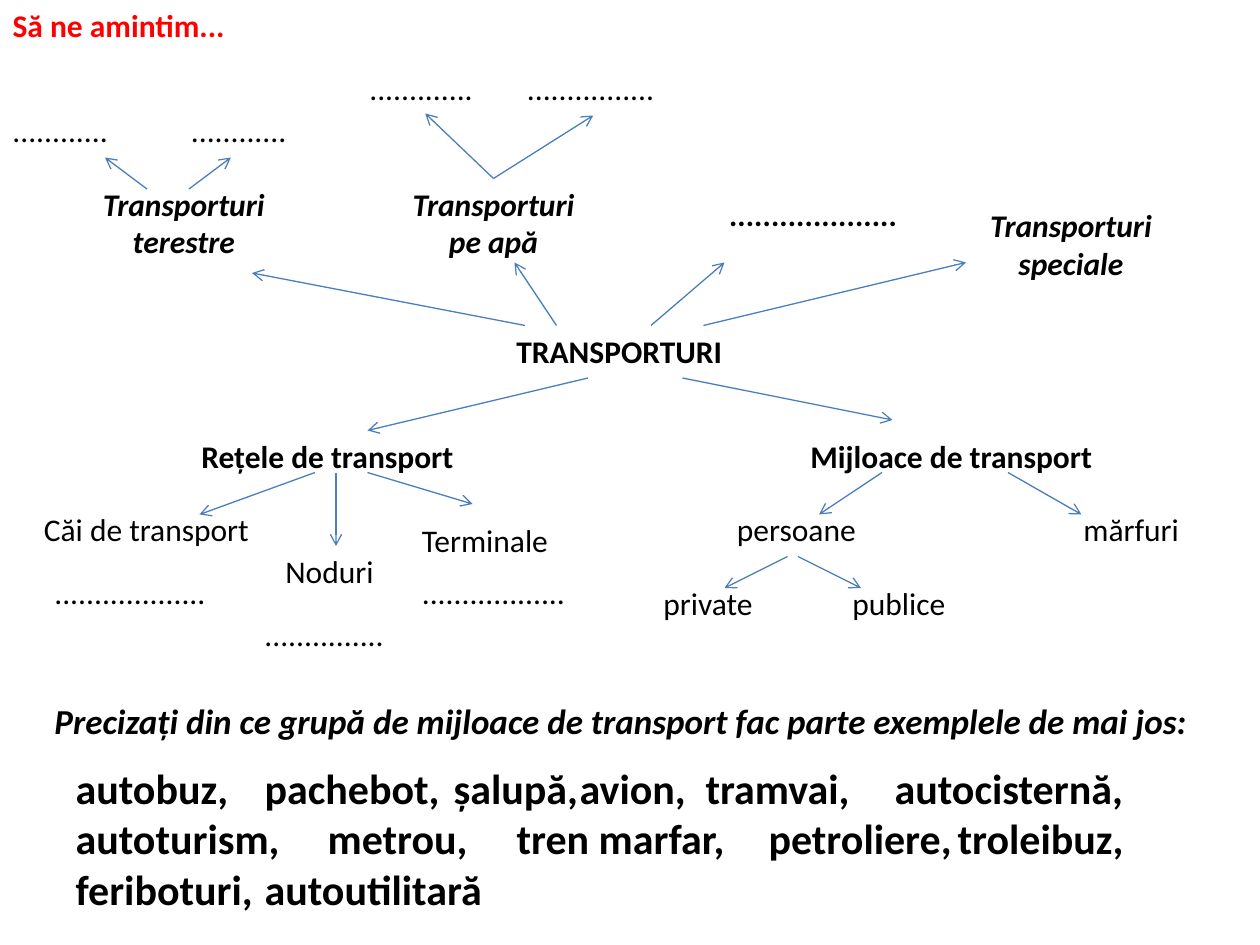
"""Build a slide reviewing the kinds, networks and means of transport."""
import pptx
import pptx.dml.color
import pptx.enum.shapes
import pptx.enum.text
import pptx.oxml.ns
import pptx.util
from dataclasses import dataclass
from lxml import etree

Cm = pptx.util.Cm
ALIGN = pptx.enum.text.PP_ALIGN


@dataclass(frozen=True)
class Theme:
    font: str = "Calibri"
    text: str = "000000"
    accent: str = "FF0000"
    arrow: str = "4B7EBC"
    label: int = 18
    task: int = 20
    words: int = 24
    arrow_width: float = 0.75


THEME = Theme()
CELL = 2.54 / 12
LINE = 4.8

TITLE = ("Să ne amintim...", 0, 0, 24, 5)
TASK = ("Precizați din ce grupă de mijloace de transport fac parte exemplele de mai jos:", 4, 66, 114, 5.25)
BODY_BOX = (6, 72, 110, 15.75)
WORDS = [
    (["autobuz,", "pachebot,", "șalupă,", "avion,", "tramvai,", "autocisternă,"],
     [3.66, 7.75, 10.83, 13.54, 17.02]),
    (["autoturism,", "metrou,", "tren marfar,", "petroliere,", "troleibuz,"],
     [4.68, 8.26, 13.41, 17.87]),
    (["feriboturi,", "autoutilitară"], [4.54]),
]
HEADS = [
    ("TRANSPORTURI", 48, 31, 24, LINE),
    ("Rețele de transport", 18, 41, 31, LINE),
    ("Mijloace de transport", 76, 41, 37, LINE),
]
KINDS = [
    ("Transporturi terestre", 7, 17, 21, 8.5),
    ("Transporturi pe apă", 37, 17, 20, 8.5),
    ("." * 20, 68, 18, 19, LINE),
    ("Transporturi speciale", 92, 19, 20, 8.5),
]
PARTS = [
    ("Căi de transport", 3, 48, 23, LINE),
    ("Noduri", 26, 52, 15, LINE),
    ("Terminale", 39, 49, 16, LINE),
    ("persoane", 69, 48, 21, LINE),
    ("mărfuri", 102, 48, 14, LINE),
    ("private", 62, 55, 13, LINE),
    ("publice", 80, 55, 13, LINE),
    ("." * 19, 4, 54, 18, LINE),
    ("." * 15, 24, 58, 15, LINE),
    ("." * 18, 39, 54, 18, LINE),
    ("." * 12, 0, 10, 14, LINE),
    ("." * 12, 17, 10, 14, LINE),
    ("." * 13, 34, 6, 13, LINE),
    ("." * 16, 49, 6, 15, LINE),
]
ARROWS = [
    (56, 36, 35, 41), (65, 36, 85, 40),
    (30, 45, 19, 49), (32, 45, 32, 52), (35, 45, 45, 48),
    (84, 45, 78, 49), (96, 45, 103, 49),
    (75, 53, 69, 56), (76, 53, 82, 56),
    (50, 31, 24, 26), (53, 31, 49, 25), (62, 31, 69, 25), (67, 31, 92, 25),
    (14, 18, 10, 15), (18, 18, 22, 15),
    (47, 17, 40.5, 10.8), (47, 17, 56.5, 11),
]


def grid(*cells):
    return [Cm(c * CELL) for c in cells]


def write(p, text, size=THEME.label, color=THEME.text, bold=False, italic=False, align=ALIGN.LEFT):
    p.alignment = align
    p.space_before = pptx.util.Pt(0)
    r = p.add_run()
    r.text = text
    r.font.name = THEME.font
    r.font.size = pptx.util.Pt(size)
    r.font.bold = bold
    r.font.italic = italic
    r.font.color.rgb = pptx.dml.color.RGBColor.from_string(color)


def place(sp, box):
    sp.left, sp.top, sp.width, sp.height = grid(*box)
    tf = sp.text_frame
    tf.word_wrap = True
    tf.auto_size = pptx.enum.text.MSO_AUTO_SIZE.NONE
    tf.vertical_anchor = pptx.enum.text.MSO_ANCHOR.TOP
    return tf


def add_label(s, text, *box, **fmt):
    sp = s.shapes.add_textbox(*grid(*box))
    write(place(sp, box).paragraphs[0], text, **fmt)


def add_arrow(s, *ends):
    c = s.shapes.add_connector(pptx.enum.shapes.MSO_CONNECTOR.STRAIGHT, *grid(*ends))
    c.line.color.rgb = pptx.dml.color.RGBColor.from_string(THEME.arrow)
    c.line.width = pptx.util.Pt(THEME.arrow_width)
    etree.SubElement(c.line._get_or_add_ln(), pptx.oxml.ns.qn("a:tailEnd"), type="arrow")
    etree.SubElement(c._element.spPr, pptx.oxml.ns.qn("a:effectLst"))


def set_tabs(p, stops):
    props = p._p.get_or_add_pPr()
    props.set("marL", "0")
    props.set("indent", "0")
    etree.SubElement(props, pptx.oxml.ns.qn("a:buNone"))
    tabs = etree.SubElement(props, pptx.oxml.ns.qn("a:tabLst"))
    for stop in stops:
        etree.SubElement(tabs, pptx.oxml.ns.qn("a:tab"), pos=str(int(Cm(stop))), algn="l")


def main():
    prs = pptx.Presentation()
    prs.slide_width, prs.slide_height = Cm(25.4), Cm(19.05)
    s = prs.slides.add_slide(prs.slide_layouts[1])
    title, body = s.placeholders

    text, *box = TITLE
    write(place(title, box).paragraphs[0], text, color=THEME.accent, bold=True)

    tf = place(body, BODY_BOX)
    for i, (words, stops) in enumerate(WORDS):
        p = tf.add_paragraph() if i else tf.paragraphs[0]
        write(p, "\t".join(words), size=THEME.words, bold=True)
        set_tabs(p, stops)

    for label in HEADS:
        add_label(s, *label, bold=True)
    for label in KINDS:
        add_label(s, *label, bold=True, italic=True, align=ALIGN.CENTER)
    for label in PARTS:
        add_label(s, *label)
    add_label(s, *TASK, size=THEME.task, bold=True, italic=True)
    for ends in ARROWS:
        add_arrow(s, *ends)

    prs.save("out.pptx")


if __name__ == "__main__":
    main()
